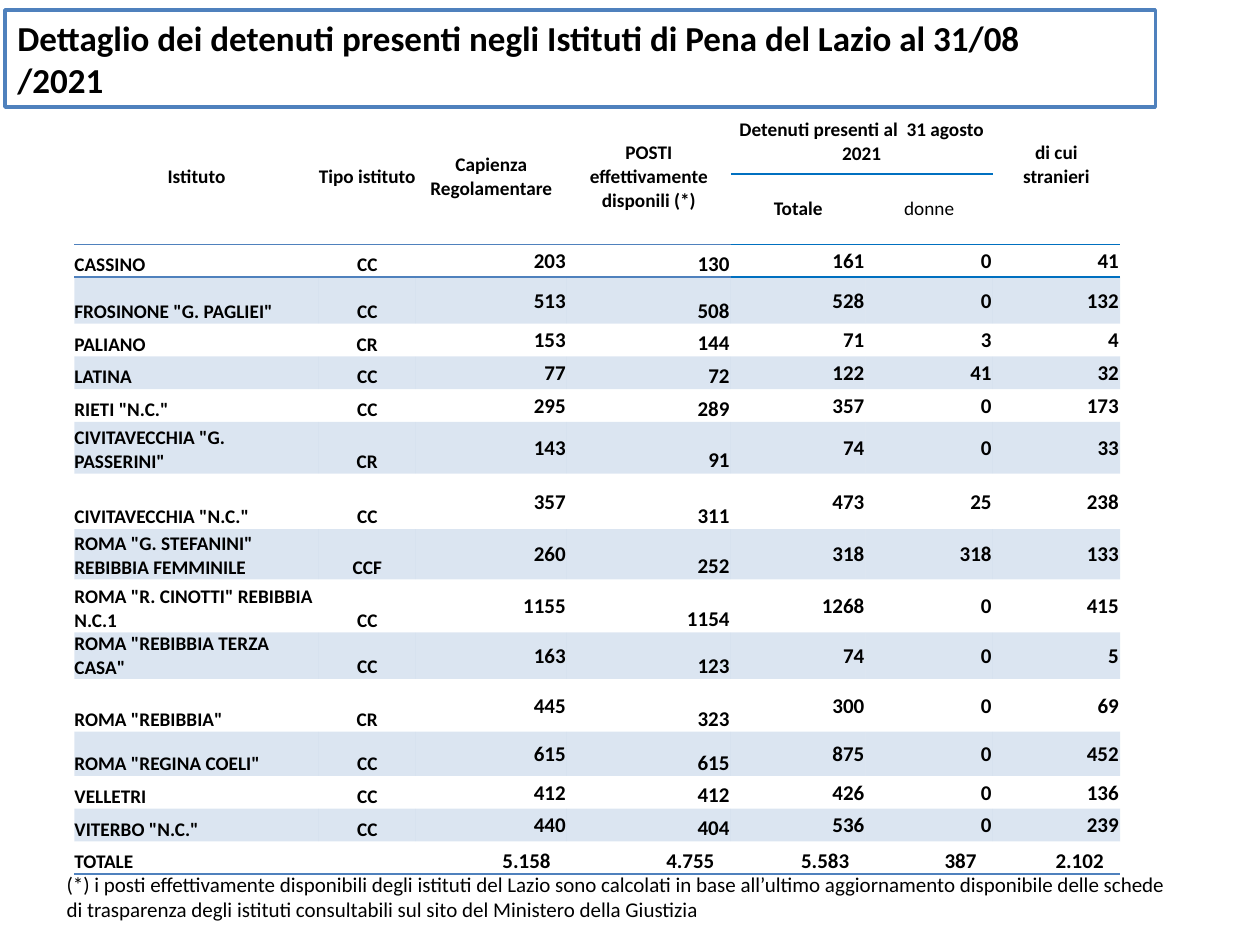
from lxml import etree
from pptx import Presentation
from pptx.dml.color import RGBColor
from pptx.enum.shapes import MSO_SHAPE
from pptx.enum.text import MSO_ANCHOR, PP_ALIGN
from pptx.oxml.ns import qn
from pptx.util import Inches, Pt

RECT = MSO_SHAPE.RECTANGLE
MID, LOW = MSO_ANCHOR.MIDDLE, MSO_ANCHOR.BOTTOM
LEFT, MIDDLE, RIGHT = PP_ALIGN.LEFT, PP_ALIGN.CENTER, PP_ALIGN.RIGHT
BLUE, RULE = "4F81BD", "0070C0"
PLAIN = "{2D5ABB26-0587-4C30-8999-92F81FD0307C}"  # no style, no grid

COLS = [1.94, 0.77, 1.2, 1.3, 1.07, 1.01, 1.01]
ROWS = [0.51, 0.56, 0.26, 0.37, 0.26, 0.26, 0.26, 0.41, 0.44,
        0.4, 0.42, 0.37, 0.42, 0.35, 0.26, 0.26, 0.26]

# Row, column, last row, last column, text (\v is a line break)
HEAD = [
    (0, 0, 1, 0, "Istituto"),
    (0, 1, 1, 1, "Tipo istituto"),
    (0, 2, 1, 2, "Capienza\nRegolamentare"),
    (0, 3, 1, 3, "POSTI\veffettivamente disponili (*)"),
    (0, 4, 0, 5, "Detenuti presenti al  31 agosto 2021"),
    (0, 6, 1, 6, "di cui\nstranieri"),
    (1, 4, 1, 4, "Totale"),
    (1, 5, 1, 5, "donne"),
]
DATA = [
    ("CASSINO", "CC", "203", "130", "161", "0", "41"),
    ('FROSINONE "G. PAGLIEI"', "CC", "513", "508", "528", "0", "132"),
    ("PALIANO", "CR", "153", "144", "71", "3", "4"),
    ("LATINA", "CC", "77", "72", "122", "41", "32"),
    ('RIETI "N.C."', "CC", "295", "289", "357", "0", "173"),
    ('CIVITAVECCHIA "G. PASSERINI"', "CR", "143", "91", "74", "0", "33"),
    ('CIVITAVECCHIA "N.C."', "CC", "357", "311", "473", "25", "238"),
    ('ROMA "G. STEFANINI" REBIBBIA FEMMINILE', "CCF",
     "260", "252", "318", "318", "133"),
    ('ROMA "R. CINOTTI" REBIBBIA N.C.1', "CC",
     "1155", "1154", "1268", "0", "415"),
    ('ROMA "REBIBBIA TERZA CASA"', "CC", "163", "123", "74", "0", "5"),
    ('ROMA "REBIBBIA"', "CR", "445", "323", "300", "0", "69"),
    ('ROMA "REGINA COELI"', "CC", "615", "615", "875", "0", "452"),
    ("VELLETRI", "CC", "412", "412", "426", "0", "136"),
    ('VITERBO "N.C."', "CC", "440", "404", "536", "0", "239"),
    ("TOTALE", "", "5.158", "4.755", "5.583", "387", "2.102"),
]


def color(code):
    return RGBColor.from_string(code)


def write(frame, text, size, bold=False, align=LEFT):
    """Fill a text frame, one paragraph for each line."""
    look = {"name": "Calibri", "size": Pt(size), "bold": bold}
    for i, line in enumerate(text.split("\n")):
        par = frame.add_paragraph() if i else frame.paragraphs[0]
        par.text, par.alignment = line, align
        for run in par.runs:
            for key, val in look.items():
                setattr(run.font, key, val)
            run.font.color.rgb = color("000000")
        if not line:  # keeps an empty cell from growing
            end = etree.SubElement(par._p, qn("a:endParaRPr"))
            end.set("sz", str(size * 100))


def style(cell, anchor, pads):
    names = ("margin_left", "margin_top", "margin_right", "margin_bottom")
    for name, pad in zip(names, pads):
        setattr(cell, name, Inches(pad))
    cell.vertical_anchor = anchor
    cell.fill.background()


def tint(cell):
    """Blue at 20 % opacity."""
    cell.fill.solid()
    cell.fill.fore_color.rgb = color(BLUE)
    tone = cell._tc.tcPr.find(".//" + qn("a:srgbClr"))
    etree.SubElement(tone, qn("a:alpha")).set("val", "20000")


def edge(cell, side, code):
    """Draw one border line of a cell."""
    props = cell._tc.get_or_add_tcPr()
    line = etree.Element(qn("a:ln" + side), w=str(Pt(1)))
    fill = etree.SubElement(line, qn("a:solidFill"))
    etree.SubElement(fill, qn("a:srgbClr")).set("val", code)
    props.insert(0, line)


def title(slide, box):
    shape = slide.shapes.add_shape(RECT, *map(Inches, box))
    shape.shadow.inherit = False
    shape.fill.solid()
    shape.fill.fore_color.rgb = color("FFFFFF")
    shape.line.color.rgb = color(BLUE)
    shape.line.width = Pt(2)
    text = ("Dettaglio dei detenuti presenti negli Istituti di Pena "
            "del Lazio al 31/08\n/2021")
    write(shape.text_frame, text, 20, True)


def note(slide, box):
    frame = slide.shapes.add_textbox(*map(Inches, box)).text_frame
    frame.word_wrap = True
    write(frame, "(*) i posti effettivamente disponibili degli istituti del "
          "Lazio sono calcolati in base all’ultimo aggiornamento disponibile "
          "delle schede di trasparenza degli istituti consultabili sul sito "
          "del Ministero della Giustizia", 12)


def head(table):
    for row, col, last, end, text in HEAD:
        cell = table.cell(row, col)
        if (row, col) != (last, end):
            cell.merge(table.cell(last, end))
        style(cell, MID, (0, 0, 0, 0.19 if col == 6 else 0))
        write(cell.text_frame, text, 11, text != "donne", MIDDLE)
    for col in range(len(COLS)):
        code = RULE if col > 3 else BLUE
        edge(table.cell(1, col), "B", code)
        edge(table.cell(2, col), "T", code)
    for col in (4, 5):
        edge(table.cell(0, col), "B", RULE)
        edge(table.cell(1, col), "T", RULE)


def body(table):
    final = len(DATA) - 1
    for i, row in enumerate(DATA):
        for col, text in enumerate(row):
            cell = table.cell(i + 2, col)
            label = col < 2
            low = label or col == 3 or i == final
            right = 0.13 if i == final else 0.01
            pads = (0, 0, 0, 0) if label else (0.01, 0.01, right, 0)
            style(cell, LOW if low else MID, pads)
            align = (LEFT, MIDDLE)[col] if label else RIGHT
            write(cell.text_frame, text, 11 if label else 12, True, align)
            if i % 2:
                tint(cell)
            if i == final:
                edge(cell, "B", BLUE)
            if i == 0 and col > 3:
                edge(cell, "B", RULE)


def grid(slide, box):
    shape = slide.shapes.add_table(len(ROWS), len(COLS), *map(Inches, box))
    table = shape.table
    table.first_row = table.horz_banding = False
    table._tbl.tblPr.find(qn("a:tableStyleId")).text = PLAIN
    for col, width in zip(table.columns, COLS):
        col.width = Inches(width)
    for row, height in zip(table.rows, ROWS):
        row.height = Inches(height)
    body(table)
    head(table)


def main():
    deck = Presentation()
    deck.slide_width, deck.slide_height = Inches(10), Inches(7.5)
    slide = deck.slides.add_slide(deck.slide_layouts[6])
    title(slide, (0.04, 0.08, 9.13, 0.77))
    note(slide, (0.43, 6.87, 9.06, 0.5))
    grid(slide, (0.59, 0.87, sum(COLS), sum(ROWS)))
    deck.save("out.pptx")


if __name__ == "__main__":
    main()
